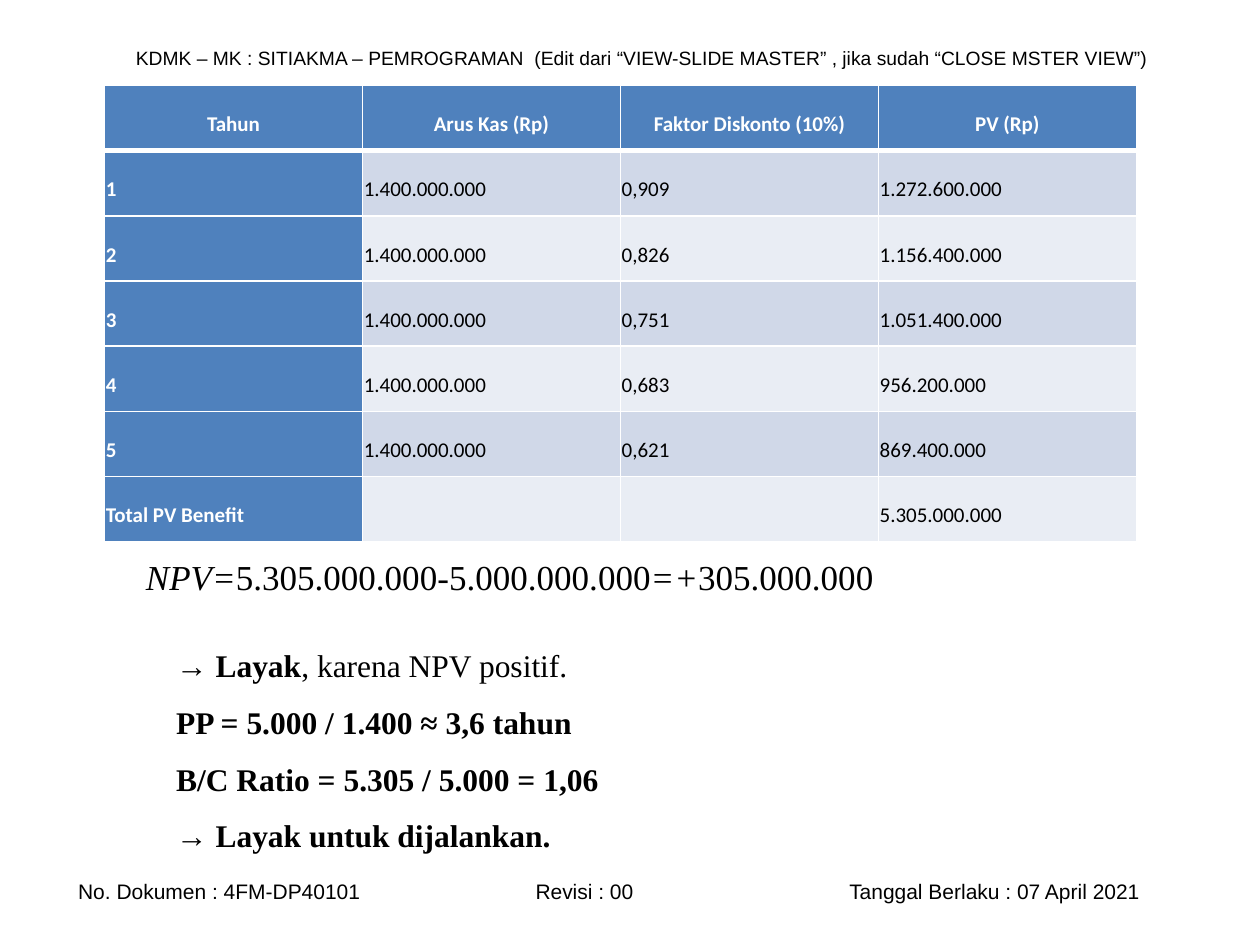
from lxml import etree
from pptx import Presentation
from pptx import util as u
from pptx.dml.color import RGBColor
from pptx.enum import text
from pptx.oxml.ns import qn

BLACK, WHITE, BLUE = "000000", "FFFFFF", "4F81BD"
BANDS = ("D0D8E8", "E9EDF4")
ALIGN, ANCHOR = text.PP_ALIGN, text.MSO_ANCHOR
ROOMY = {"line_spacing": 1.5, "space_after": u.Pt(8)}


def rgb(value):
    return RGBColor.from_string(value)


def assign(target, values):
    for name, value in values.items():
        setattr(target, name, value)


def add_span(para, wording, color=BLACK, **font):
    span = para.add_run()
    span.text = wording
    assign(span.font, font)
    span.font.color.rgb = rgb(color)


def add_box(page, area, anchor, **layout):
    box = page.shapes.add_textbox(*map(u.Inches, area))
    frame = box.text_frame
    assign(frame, {"word_wrap": True, "vertical_anchor": anchor})
    assign(frame.paragraphs[0], layout)
    return frame


def add_tabs(para, stops):
    tabs = etree.SubElement(para._p.get_or_add_pPr(), qn("a:tabLst"))
    for stop in stops:
        etree.SubElement(tabs, qn("a:tab"), pos=str(u.Inches(stop)), algn="l")


def add_header(page, area):
    frame = add_box(page, area, ANCHOR.MIDDLE, alignment=ALIGN.JUSTIFY)
    add_span(frame.paragraphs[0],
             "KDMK – MK : SITIAKMA – PEMROGRAMAN  (Edit dari “VIEW-SLIDE MASTER” , "
             "jika sudah “CLOSE MSTER VIEW”)", name="Arial", size=u.Pt(11))


def add_footer(page, area):
    frame = add_box(page, area, ANCHOR.MIDDLE)
    frame.margin_left = u.Inches(0.42)
    para = frame.paragraphs[0]
    add_tabs(para, (3.63, 6.12))
    add_span(para, "No. Dokumen : 4FM-DP40101\tRevisi : 00\tTanggal Berlaku : 07 April 2021",
             name="Arial", size=u.Pt(12))


def add_borders(cell, widths):
    properties = cell._tc.get_or_add_tcPr()
    for side, width in zip("LRTB", widths):
        line = etree.SubElement(properties, qn(f"a:ln{side}"), w=str(u.Pt(width)))
        fill = etree.SubElement(line, qn("a:solidFill"))
        etree.SubElement(fill, qn("a:srgbClr"), val=WHITE)


def fill_cell(cell, wording, row, column):
    heading = row == 0 or column == 0
    margin = u.Inches(0.01)
    assign(cell, {"vertical_anchor": ANCHOR.MIDDLE, "margin_left": margin,
                  "margin_right": margin, "margin_top": margin, "margin_bottom": margin})
    add_borders(cell, (1, 1, 3 if row == 1 else 1, 3 if row == 0 else 1))
    cell.fill.solid()
    cell.fill.fore_color.rgb = rgb(BLUE if heading else BANDS[(row - 1) % 2])
    para = cell.text_frame.paragraphs[0]
    assign(para, {**ROOMY, "alignment": ALIGN.CENTER if row == 0 else ALIGN.LEFT})
    if wording:
        add_span(para, wording, WHITE if heading else BLACK,
                 name="Calibri", size=u.Pt(12), bold=heading)


def add_cash_table(page, area):
    cash = "1.400.000.000"
    rows = [
        ("Tahun", "Arus Kas (Rp)", "Faktor Diskonto (10%)", "PV (Rp)"),
        ("1", cash, "0,909", "1.272.600.000"),
        ("2", cash, "0,826", "1.156.400.000"),
        ("3", cash, "0,751", "1.051.400.000"),
        ("4", cash, "0,683", "956.200.000"),
        ("5", cash, "0,621", "869.400.000"),
        ("Total PV Benefit", "", "", "5.305.000.000"),
    ]
    frame = page.shapes.add_table(len(rows), len(rows[0]), *map(u.Inches, area))
    for row, values in enumerate(rows):
        for column, wording in enumerate(values):
            fill_cell(frame.table.cell(row, column), wording, row, column)


def add_npv(page, area):
    para = add_box(page, area, ANCHOR.TOP).paragraphs[0]
    parts = ("NPV=", "5.305.000.000", "-", "5.000.000.000", "=+", "305.000.000")
    for index, wording in enumerate(parts):
        add_span(para, wording, name="Times New Roman", size=u.Pt(20), italic=index % 2 == 0)


def add_conclusion(page, area):
    para = add_box(page, area, ANCHOR.TOP, **ROOMY).paragraphs[0]
    lines = [
        [("→ ", False), ("Layak", True), (", karena NPV positif.", False)],
        [("PP = 5.000 / 1.400 ≈ 3,6 tahun", True)],
        [("B/C Ratio = 5.305 / 5.000 = 1,06", True)],
        [("→ ", False), ("Layak untuk dijalankan.", True)],
    ]
    for index, line in enumerate(lines):
        if index:
            para.add_line_break()
        for wording, bold in line:
            add_span(para, wording, name="Times New Roman", size=u.Pt(18), bold=bold)


def main():
    deck = Presentation()
    assign(deck, {"slide_width": u.Inches(10), "slide_height": u.Inches(7.5)})
    page = deck.slides.add_slide(deck.slide_layouts[6])
    add_header(page, (0.98, 0.31, 8.43, 0.29))
    add_footer(page, (0.2, 6.92, 9.45, 0.3))
    add_cash_table(page, (0.83, 0.68, 8.19, 3.62))
    add_npv(page, (1.06, 4.36, 6.46, 1.11))
    add_conclusion(page, (1.3, 4.93, 5.2, 1.85))
    deck.save("out.pptx")


if __name__ == "__main__":
    main()
